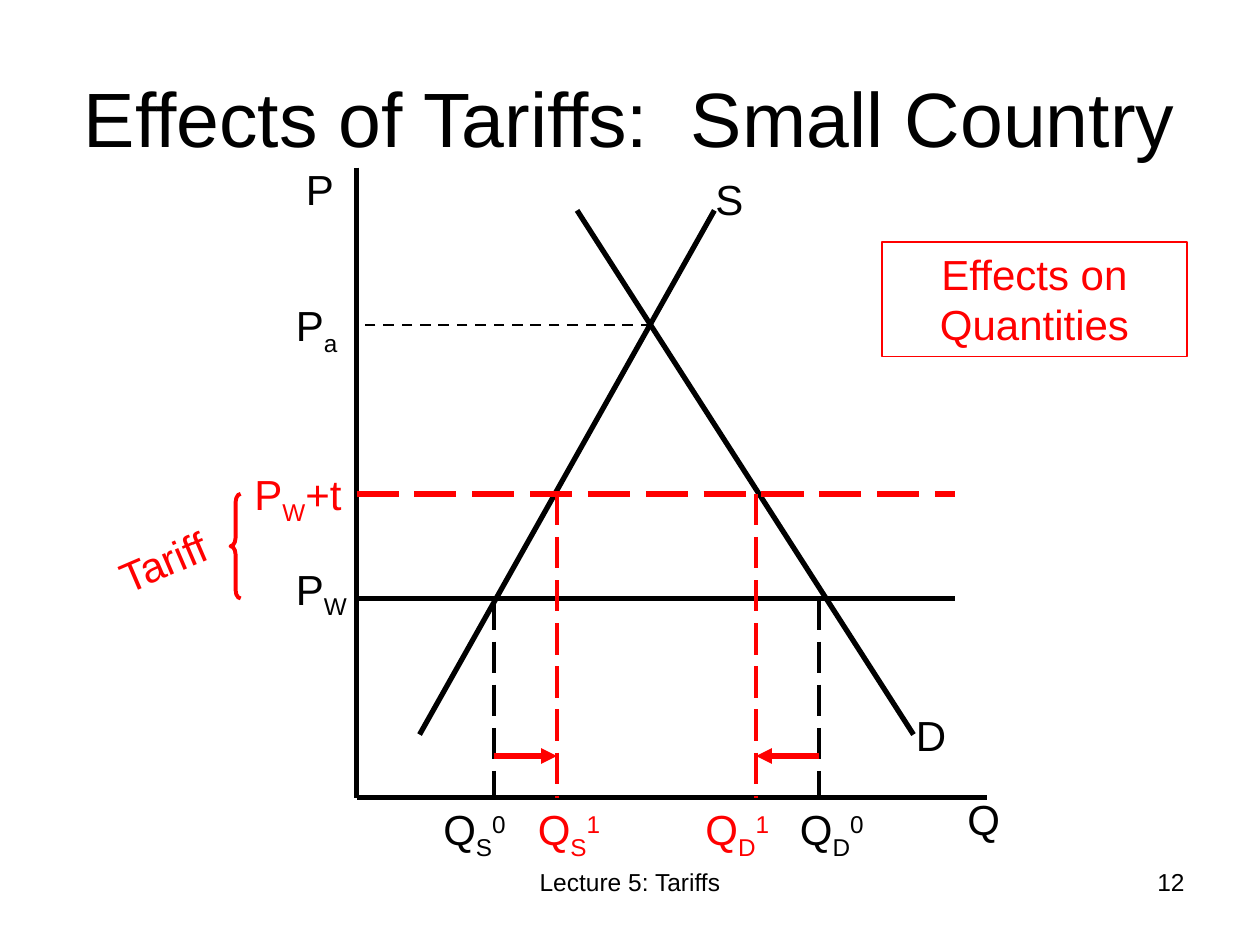
from lxml import etree
from pptx import Presentation
from pptx.dml.color import RGBColor
from pptx.enum.dml import MSO_LINE
from pptx.enum.shapes import MSO_CONNECTOR, MSO_SHAPE
from pptx.enum.text import MSO_ANCHOR, PP_ALIGN
from pptx.oxml.ns import qn
from pptx.util import Inches, Pt

BLACK = RGBColor(0x00, 0x00, 0x00)
RED = RGBColor(0xFF, 0x00, 0x00)
DASH, LONG_DASH = MSO_LINE.DASH, MSO_LINE.LONG_DASH
STRAIGHT = MSO_CONNECTOR.STRAIGHT
LEFT_BRACE, RECTANGLE = MSO_SHAPE.LEFT_BRACE, MSO_SHAPE.RECTANGLE
MIDDLE, TOP = MSO_ANCHOR.MIDDLE, MSO_ANCHOR.TOP
LEFT, CENTER, RIGHT = PP_ALIGN.LEFT, PP_ALIGN.CENTER, PP_ALIGN.RIGHT
FONT = "Arial"
SUBSCRIPT, SUPERSCRIPT = -25000, 30000


def fill_text(shape, runs, size, color=BLACK, align=LEFT, anchor=TOP):
    """Write (text, baseline) runs into one paragraph of a shape."""
    frame = shape.text_frame
    frame.word_wrap = True
    frame.vertical_anchor = anchor
    paragraph = frame.paragraphs[0]
    paragraph.alignment = align
    paragraph.font.name = FONT
    paragraph.font.size = Pt(size)
    paragraph.font.color.rgb = color
    for text, baseline in runs:
        run = paragraph.add_run()
        run.text = text
        if baseline:
            run.font._element.set("baseline", str(baseline))


def add_text(slide, box, runs, size=24, color=BLACK, align=LEFT, anchor=TOP):
    """Add a text box at left, top, width, height in inches."""
    text_box = slide.shapes.add_textbox(*map(Inches, box))
    fill_text(text_box, runs, size, color, align, anchor)
    return text_box


def add_line(slide, start, end, color=BLACK, width=3, dash=None, arrow=False):
    """Draw a straight line between two points in inches."""
    line = slide.shapes.add_connector(STRAIGHT, *map(Inches, (*start, *end)))
    line.line.color.rgb = color
    line.line.width = Pt(width)
    if dash:
        line.line.dash_style = dash
    properties = line._element.spPr
    if arrow:
        outline = properties.find(qn("a:ln"))
        etree.SubElement(outline, qn("a:tailEnd"), type="triangle")
    etree.SubElement(properties, qn("a:effectLst"))


def add_outline(slide, kind, box, width):
    """Add an unfilled red preset shape."""
    shape = slide.shapes.add_shape(kind, *map(Inches, box))
    shape.shadow.inherit = False
    shape.fill.background()
    shape.line.color.rgb = RED
    shape.line.width = Pt(width)
    return shape


def build_title(slide, box):
    """Place the slide title."""
    add_text(slide, box, [("Effects of Tariffs:  Small Country", 0)], 44,
             align=CENTER, anchor=MIDDLE)


def build_diagram(slide, box):
    """Draw the supply and demand diagram with its axes filling the box."""
    left, top, width, height = box
    right, bottom = left + width, top + height
    autarky, tariff_price, world = top + 1.25, top + 2.59, top + 3.42
    price_end = right - 0.25
    curve_top, curve_bottom = top + 0.34, top + 4.5
    supply_0, supply_1, demand_1, demand_0 = (
        left + offset for offset in (1.09, 1.59, 3.17, 3.67))
    arrow_level = bottom - 0.33

    add_line(slide, (left, top), (left, bottom))
    add_line(slide, (left, bottom), (right, bottom))
    add_line(slide, (left + 2.84, curve_top), (left + 0.5, curve_bottom))
    add_line(slide, (left + 1.75, curve_top), (left + 4.42, curve_bottom))
    add_line(slide, (left + 2.34, autarky), (left, autarky), width=1.5, dash=DASH)
    add_line(slide, (left, world), (price_end, world))
    add_line(slide, (left, tariff_price), (price_end, tariff_price), RED,
             dash=LONG_DASH)

    quantities = [
        (supply_0, world, BLACK, "S", "0", -0.5),
        (demand_0, world, BLACK, "D", "0", -0.25),
        (supply_1, tariff_price, RED, "S", "1", -0.25),
        (demand_1, tariff_price, RED, "D", "1", -0.5),
    ]
    for x, price, color, curve, period, shift in quantities:
        add_line(slide, (x, price), (x, bottom), color, 2.25, LONG_DASH)
        add_text(slide, (x + shift, bottom, 0.83, 0.5),
                 [("Q", 0), (curve, SUBSCRIPT), (period, SUPERSCRIPT)], color=color)

    for before, after in ((supply_0, supply_1), (demand_0, demand_1)):
        add_line(slide, (before, arrow_level), (after, arrow_level), RED, arrow=True)

    labels = [
        (left + 2.75, top, 0.58, [("S", 0)], BLACK),
        (left + 4.34, top + 4.25, 0.58, [("D", 0)], BLACK),
        (left - 0.5, top - 0.08, 0.67, [("P", 0)], BLACK),
        (right - 0.25, bottom - 0.08, 0.58, [("Q", 0)], BLACK),
        (left - 0.58, autarky - 0.25, 0.92, [("P", 0), ("a", SUBSCRIPT)], BLACK),
        (left - 0.58, world - 0.33, 0.67, [("P", 0), ("W", SUBSCRIPT)], BLACK),
        (left - 0.91, tariff_price - 0.25, 1.08,
         [("P", 0), ("W", SUBSCRIPT), ("+t", 0)], RED),
    ]
    for x, y, label_width, runs, color in labels:
        add_text(slide, (x, y, label_width, 0.5), runs, color=color)

    brace = add_outline(slide, LEFT_BRACE,
                        (left - 1, tariff_price, 0.08, world - tariff_price), 2.25)
    brace.adjustments[0] = 0.83
    tariff = add_text(slide, (left - 2, tariff_price + 0.25, 1.08, 0.5),
                      [("Tariff", 0)], color=RED)
    tariff.rotation = 336.8


def build_callout(slide, box):
    """Place the framed note beside the diagram."""
    callout = add_outline(slide, RECTANGLE, box, 0.75)
    fill_text(callout, [("Effects on Quantities", 0)], 24, RED, CENTER)


def build_footer(slide, box):
    """Place the lecture name and the slide number along the box."""
    left, top, width, height = box
    name_width, number_width = 3.17, 2.33
    add_text(slide, (left + (width - name_width) / 2, top, name_width, height),
             [("Lecture 5: Tariffs", 0)], 14, align=CENTER)
    add_text(slide, (left + width - number_width, top, number_width, height),
             [("12", 0)], 14, align=RIGHT)


def main():
    """Build and save the slide."""
    presentation = Presentation()
    presentation.slide_width = Inches(10)
    presentation.slide_height = Inches(7.5)
    slide = presentation.slides.add_slide(presentation.slide_layouts[6])
    build_footer(slide, (0.5, 6.83, 9, 0.52))
    build_title(slide, (0.5, 0.3, 9, 1.25))
    build_diagram(slide, (2.83, 1.33, 5, 5))
    build_callout(slide, (7, 1.92, 2.42, 0.91))
    presentation.save("out.pptx")


if __name__ == "__main__":
    main()
